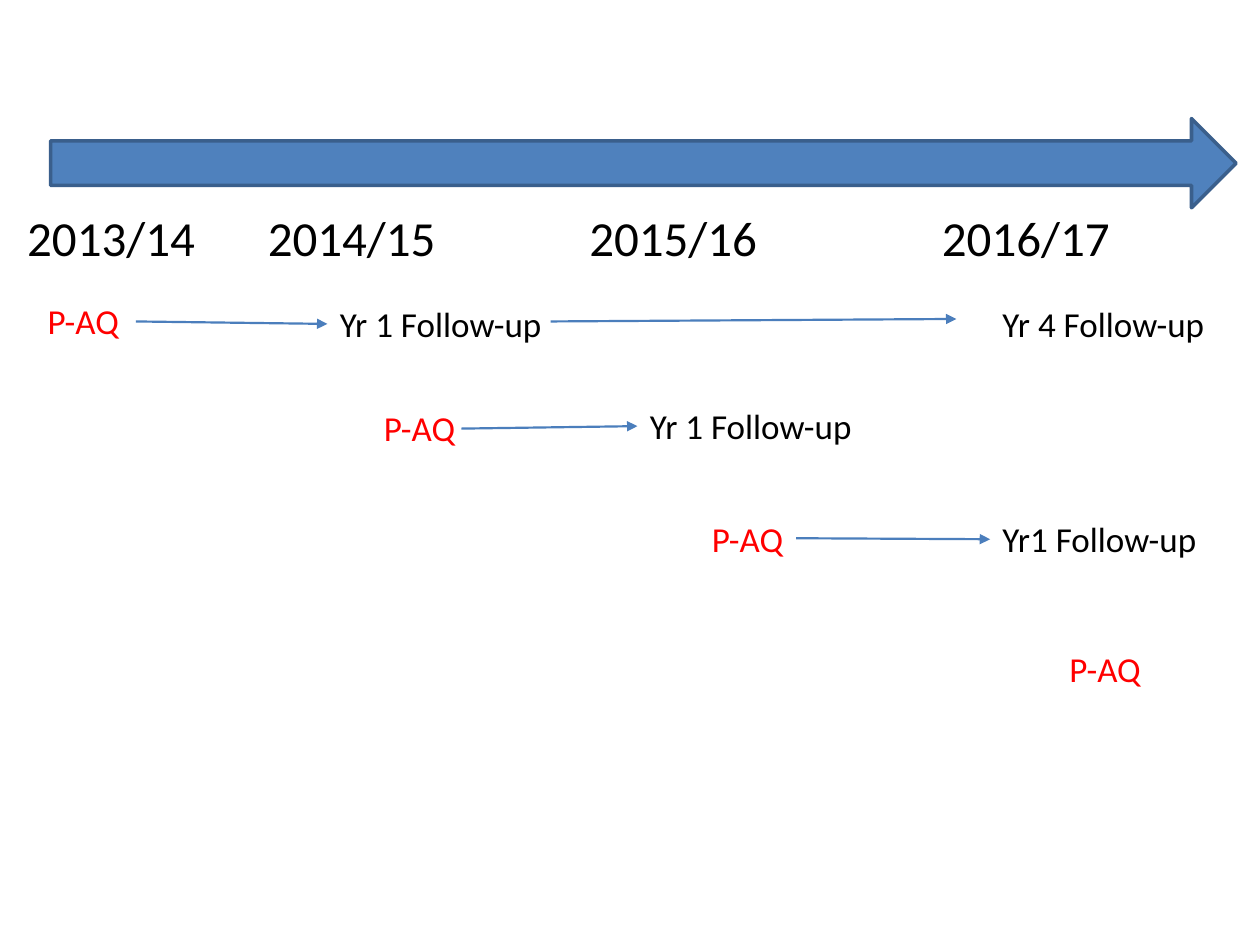
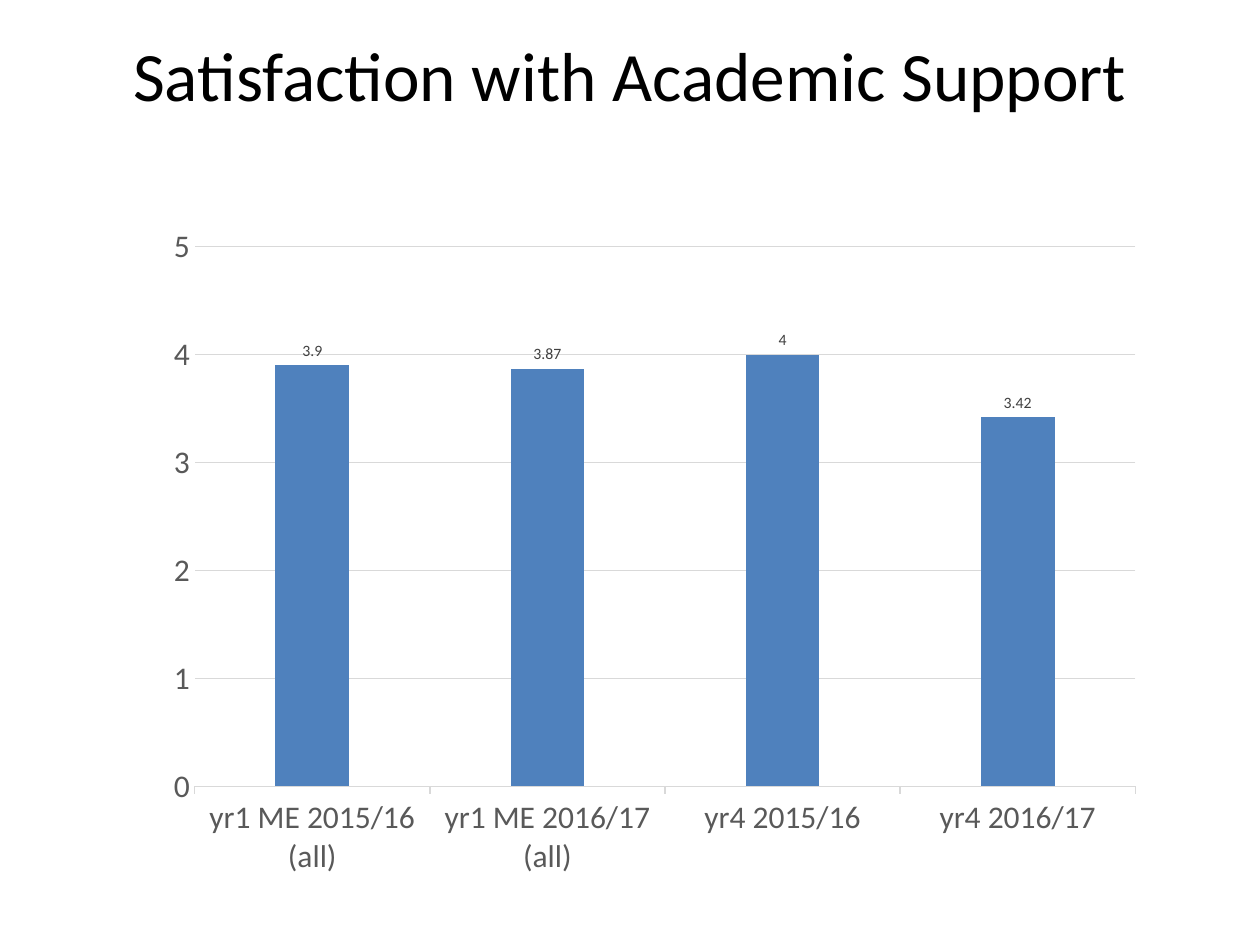
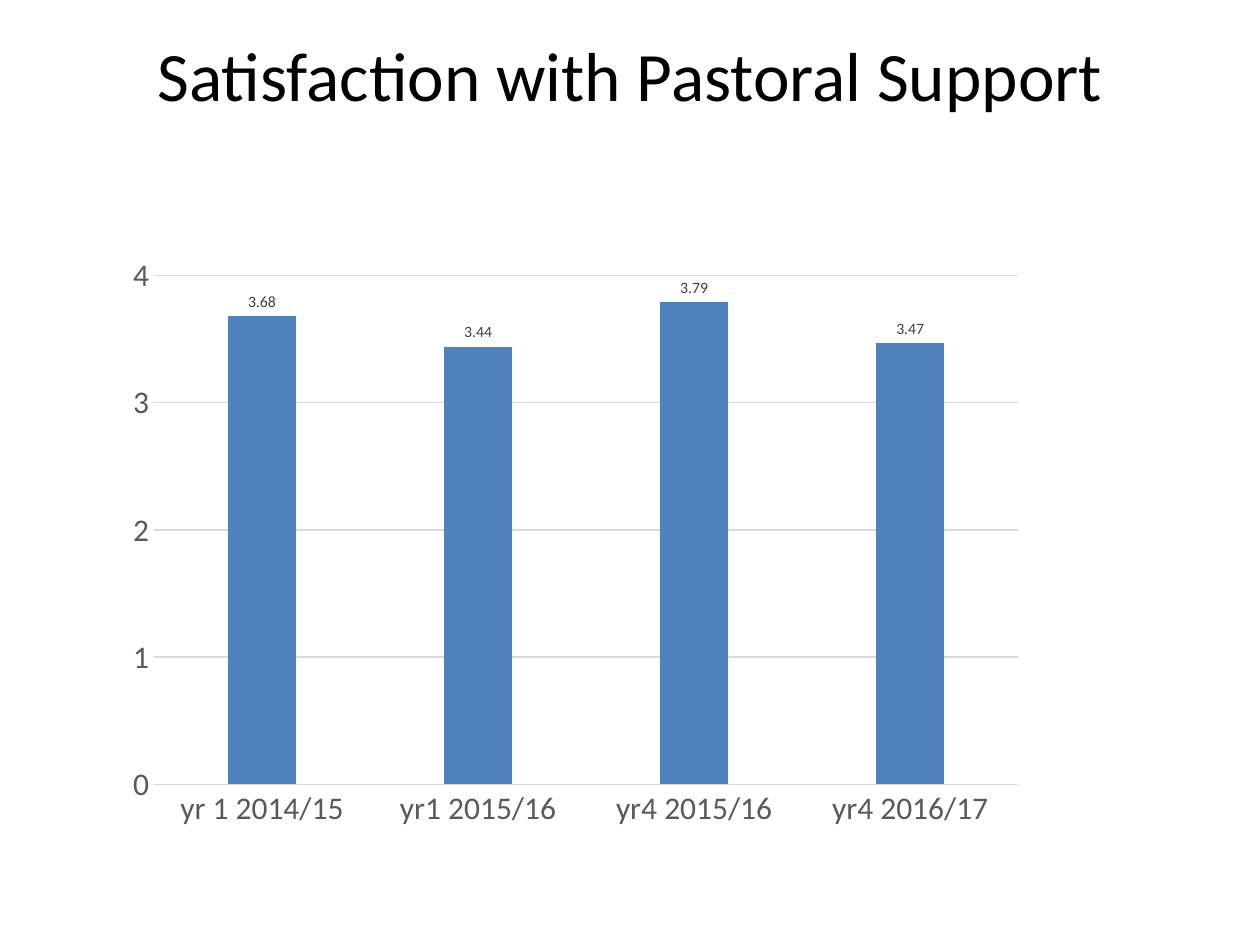
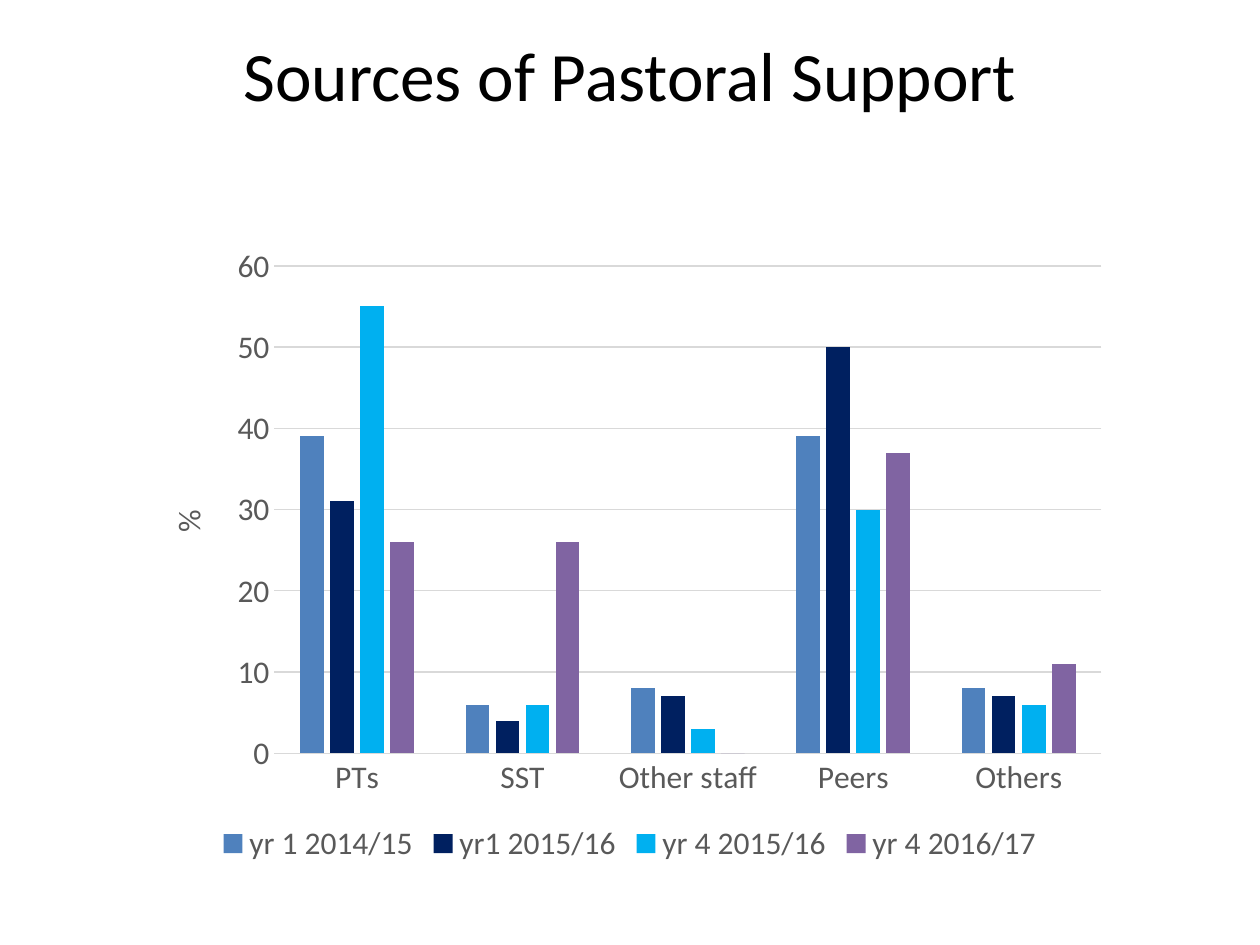
from dataclasses import dataclass

from lxml.etree import SubElement
from pptx import Presentation
from pptx.chart.data import CategoryChartData
from pptx.dml.color import RGBColor
from pptx.enum.chart import XL_CHART_TYPE as ChartType
from pptx.enum.chart import XL_LABEL_POSITION as LabelPosition
from pptx.enum.chart import XL_LEGEND_POSITION as LegendPosition
from pptx.enum.chart import XL_TICK_MARK as TickMark
from pptx.enum.shapes import MSO_CONNECTOR as Connector
from pptx.enum.shapes import MSO_SHAPE as Shape
from pptx.enum.text import PP_ALIGN as Align
from pptx.oxml.ns import qn
from pptx.util import Cm, Pt


@dataclass(frozen=True)
class Theme:
    font: str = "Calibri"
    ink: str = "000000"
    accent: str = "4F81BD"
    accent_edge: str = "3A5F8C"
    arrow: str = "4B7EBC"
    highlight: str = "FF0000"
    axis: str = "595959"
    grid: str = "D9D9D9"
    label: str = "404040"
    navy: str = "002060"
    sky: str = "00B0F0"
    purple: str = "8064A2"
    title_size: float = 39.6
    year_size: float = 28
    stage_size: float = 20
    axis_size: float = 18
    label_size: float = 9


THEME = Theme()
BLANK_LAYOUT = 6
LEFT_SIDE, RIGHT_SIDE = 1, 3
STAGE_HEIGHT = 1.12

YEARS = ["2013/14", "2014/15", "2015/16", "2016/17"]
YEAR_BOX = (0.3, 2.44, 25.1, 13.89)
YEAR_TABS = [4.85, 11.33, 18.44]
TIME_ARROW = (1.02, 2.39, 23.9, 1.8)

STAGES = {
    "intake 2013": ("P-AQ", 0.71, 5.92, 2.03),
    "intake 2014": ("P-AQ", 7.49, 8.08, 2.59),
    "intake 2015": ("P-AQ", 14.1, 10.31, 2.39),
    "intake 2016": ("P-AQ", 21.31, 12.93, 4.09),
    "year 1 of 2013": ("Yr 1 Follow-up", 6.6, 5.97, 4.98),
    "year 1 of 2014": ("Yr 1 Follow-up", 12.85, 8.03, 6.38),
    "year 1 of 2015": ("Yr1 Follow-up", 19.96, 10.31, 5.44),
    "year 4 of 2013": ("Yr 4 Follow-up", 19.96, 5.97, 5.44),
}
STEPS = [
    ("intake 2013", "year 1 of 2013"),
    ((9.3, 8.64), "year 1 of 2014"),
    ((16.05, 10.85), "year 1 of 2015"),
    ((11.1, 6.48), (19.28, 6.43)),
]

CHARTS = [
    {
        "title": "Satisfaction with Academic Support",
        "place": (3.1, 4.32, 20.19, 13.59),
        "categories": ["yr1 ME 2015/16 (all)", "yr1 ME 2016/17 (all)", "yr4 2015/16", "yr4 2016/17"],
        "series": [("Series 1", [3.9, 3.87, 4, 3.42], THEME.accent)],
        "scale": (5, 1),
        "tick": TickMark.OUTSIDE,
    },
    {
        "title": "Satisfaction with Pastoral Support",
        "place": (2.31, 4.93, 18.59, 11.99),
        "categories": ["yr 1 2014/15", "yr1 2015/16", "yr4 2015/16", "yr4 2016/17"],
        "series": [("Series 1", [3.68, 3.44, 3.79, 3.47], THEME.accent)],
        "scale": (4, 1),
        "tick": TickMark.NONE,
    },
    {
        "title": "Sources of Pastoral Support",
        "place": (2.79, 4.72, 19.81, 12.8),
        "categories": ["PTs", "SST", "Other staff", "Peers", "Others"],
        "series": [
            ("yr 1 2014/15", [39, 6, 8, 39, 8], THEME.accent),
            ("yr1 2015/16", [31, 4, 7, 50, 7], THEME.navy),
            ("yr 4 2015/16", [55, 6, 3, 30, 6], THEME.sky),
            ("yr 4 2016/17", [26, 26, 0, 37, 11], THEME.purple),
        ],
        "scale": (60, 10),
        "tick": TickMark.NONE,
        "unit": "%",
    },
]


def lengths(values):
    return [Cm(value) for value in values]


def style_font(font, size, color):
    font.name = THEME.font
    font.size = Pt(size)
    font.bold = False
    font.color.rgb = RGBColor.from_string(color)


def style_fill(fill, color):
    fill.solid()
    fill.fore_color.rgb = RGBColor.from_string(color)


def style_line(line, color, width):
    line.color.rgb = RGBColor.from_string(color)
    line.width = Pt(width)


def add_text(page, text, place, size, color, align=Align.LEFT):
    box = page.shapes.add_textbox(*lengths(place))
    frame = box.text_frame
    frame.word_wrap = True
    frame.text = text
    para = frame.paragraphs[0]
    para.alignment = align
    for span in para.runs:
        style_font(span.font, size, color)
    return box


def add_years(page):
    box = add_text(page, "\t".join(YEARS), YEAR_BOX, THEME.year_size, THEME.ink)
    box.text_frame.margin_top = Cm(1.74)
    properties = box.text_frame.paragraphs[0]._p.get_or_add_pPr()
    tabs = SubElement(properties, qn("a:tabLst"))
    for position in YEAR_TABS:
        SubElement(tabs, qn("a:tab"), pos=str(Cm(position)), algn="l")


def add_time_arrow(page):
    arrow = page.shapes.add_shape(Shape.RIGHT_ARROW, *lengths(TIME_ARROW))
    arrow.shadow.inherit = False
    style_fill(arrow.fill, THEME.accent)
    style_line(arrow.line, THEME.accent_edge, 2)


def add_step(page, boxes, start, end):
    start_point = (0, 0) if start in boxes else start
    end_point = (0, 0) if end in boxes else end
    step = page.shapes.add_connector(Connector.STRAIGHT, *lengths(start_point + end_point))
    if start in boxes:
        step.begin_connect(boxes[start], RIGHT_SIDE)
    if end in boxes:
        step.end_connect(boxes[end], LEFT_SIDE)
    style_line(step.line, THEME.arrow, 1.25)
    SubElement(step.line._get_or_add_ln(), qn("a:tailEnd"), type="triangle")
    SubElement(step._element.spPr, qn("a:effectLst"))


def add_timeline(page):
    add_years(page)
    add_time_arrow(page)
    boxes = {}
    for name, (text, left, top, width) in STAGES.items():
        color = THEME.highlight if name.startswith("intake") else THEME.ink
        place = (left, top, width, STAGE_HEIGHT)
        boxes[name] = add_text(page, text, place, THEME.stage_size, color)
    for start, end in STEPS:
        add_step(page, boxes, start, end)


def add_title(page, text):
    box = add_text(page, text, (1.27, 0.65, 22.86, 2.47), THEME.title_size, THEME.ink, Align.CENTER)
    box.text_frame.margin_top = 0


def style_axes(chart, content):
    category_axis, value_axis = chart.category_axis, chart.value_axis
    for axis in (category_axis, value_axis):
        style_font(axis.tick_labels.font, THEME.axis_size, THEME.axis)
        axis.minor_tick_mark = TickMark.NONE
    category_axis.major_tick_mark = content["tick"]
    style_line(category_axis.format.line, THEME.grid, 0.75)
    value_axis.major_tick_mark = TickMark.NONE
    value_axis.format.line.fill.background()
    value_axis.minimum_scale = 0
    value_axis.maximum_scale, value_axis.major_unit = content["scale"]
    style_line(value_axis.major_gridlines.format.line, THEME.grid, 0.75)
    if "unit" in content:
        frame = value_axis.axis_title.text_frame
        frame.text = content["unit"]
        style_font(frame.paragraphs[0].runs[0].font, THEME.axis_size, THEME.axis)


def add_labels(plot):
    plot.has_data_labels = True
    labels = plot.data_labels
    labels.show_value = True
    labels.position = LabelPosition.OUTSIDE_END
    style_font(labels.font, THEME.label_size, THEME.label)


def add_legend(chart):
    chart.has_legend = True
    chart.legend.position = LegendPosition.BOTTOM
    chart.legend.include_in_layout = False
    style_font(chart.legend.font, THEME.axis_size, THEME.axis)


def add_column_chart(page, content):
    data = CategoryChartData()
    data.categories = content["categories"]
    for name, values, _ in content["series"]:
        data.add_series(name, values)
    place = lengths(content["place"])
    chart = page.shapes.add_chart(ChartType.COLUMN_CLUSTERED, *place, data).chart
    style_font(chart.font, 10, THEME.ink)
    chart.has_title = False
    plot = chart.plots[0]
    plot.gap_width = 219
    plot.overlap = -27
    plot.vary_by_categories = False
    for series, (_, _, color) in zip(plot.series, content["series"]):
        style_fill(series.format.fill, color)
    style_axes(chart, content)
    if len(content["series"]) > 1:
        add_legend(chart)
    else:
        chart.has_legend = False
        add_labels(plot)


def main():
    deck = Presentation()
    deck.slide_width, deck.slide_height = Cm(25.4), Cm(19.05)
    layout = deck.slide_layouts[BLANK_LAYOUT]
    add_timeline(deck.slides.add_slide(layout))
    for content in CHARTS:
        page = deck.slides.add_slide(layout)
        add_title(page, content["title"])
        add_column_chart(page, content)
    deck.save("out.pptx")


if __name__ == "__main__":
    main()
